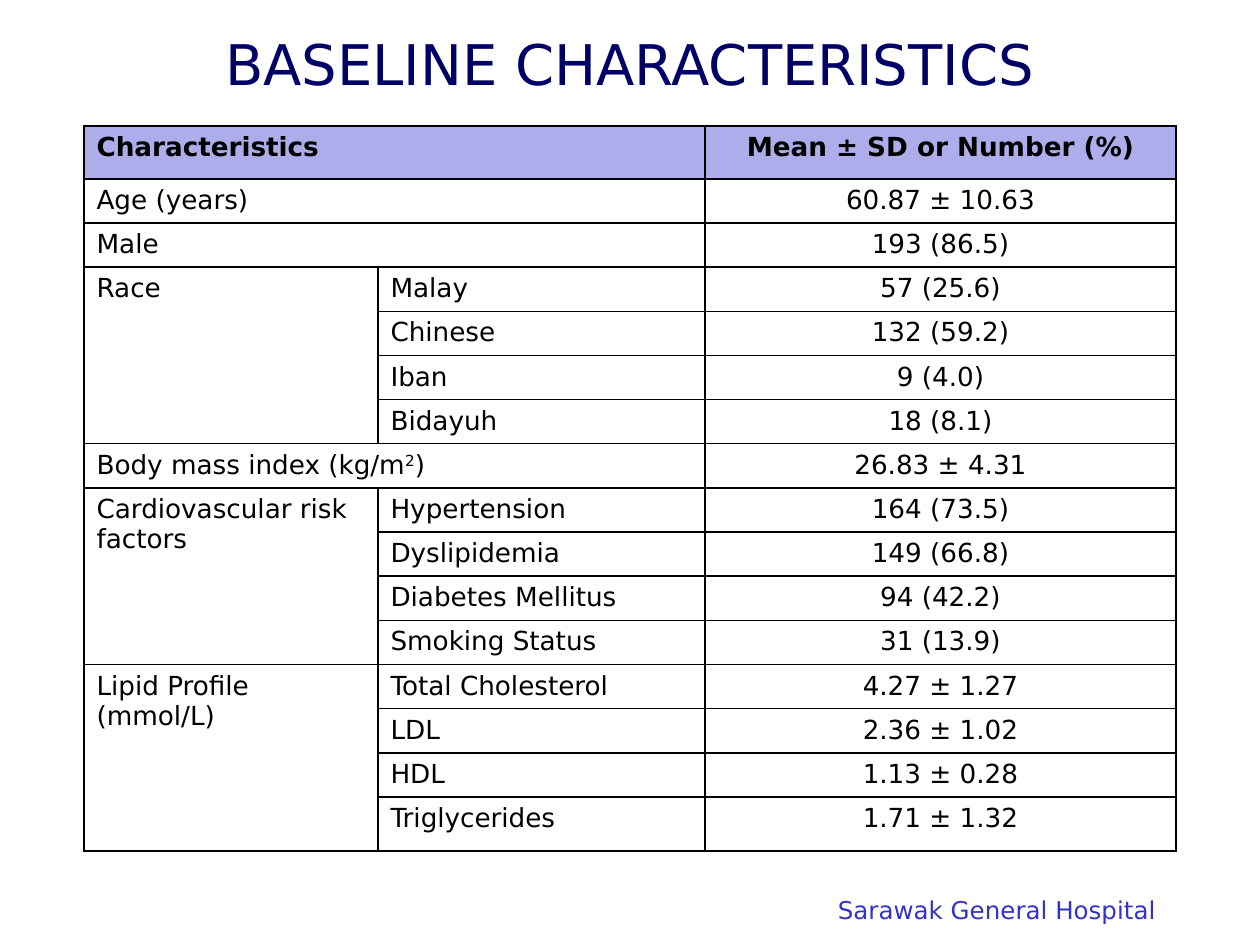
from dataclasses import dataclass

from lxml.etree import SubElement
from pptx import Presentation
from pptx.dml.color import RGBColor
from pptx.enum.text import MSO_ANCHOR, PP_ALIGN
from pptx.oxml.ns import qn
from pptx.table import Table, _Cell
from pptx.text.text import _Paragraph
from pptx.util import Pt


@dataclass(frozen=True)
class Theme:
    font: str = "DejaVu Sans"
    title: str = "000066"
    ink: str = "000000"
    footer: str = "3333CC"
    header_fill: str = "ADADEB"
    body_fill: str = "FFFFFF"
    title_size: float = 32
    table_size: float = 15
    footer_size: float = 14
    border_width: float = 1


@dataclass(frozen=True)
class Entry:
    label: str
    value: str


@dataclass(frozen=True)
class Group:
    label: str
    entries: tuple[Entry, ...]


THEME = Theme()
HEADER = Entry("Characteristics", "Mean ± SD or Number (%)")
BASELINE: tuple[Entry | Group, ...] = (
    Entry("Age (years)", "60.87 ± 10.63"),
    Entry("Male", "193 (86.5)"),
    Group("Race", (
        Entry("Malay", "57 (25.6)"),
        Entry("Chinese", "132 (59.2)"),
        Entry("Iban", "9 (4.0)"),
        Entry("Bidayuh", "18 (8.1)"),
    )),
    Entry("Body mass index (kg/m^2^)", "26.83 ± 4.31"),
    Group("Cardiovascular risk factors", (
        Entry("Hypertension", "164 (73.5)"),
        Entry("Dyslipidemia", "149 (66.8)"),
        Entry("Diabetes Mellitus", "94 (42.2)"),
        Entry("Smoking Status", "31 (13.9)"),
    )),
    Group("Lipid Profile (mmol/L)", (
        Entry("Total Cholesterol", "4.27 ± 1.27"),
        Entry("LDL", "2.36 ± 1.02"),
        Entry("HDL", "1.13 ± 0.28"),
        Entry("Triglycerides", "1.71 ± 1.32"),
    )),
)
COLUMN_WIDTHS = (168, 187, 269)
HEADER_HEIGHT, ROW_HEIGHT, LAST_HEIGHT = 30.2, 25.2, 31


def write(paragraph: _Paragraph, text: str, size: float, color: str,
          align: PP_ALIGN = PP_ALIGN.LEFT, bold: bool = False) -> None:
    paragraph.alignment = align
    paragraph.font.name = THEME.font
    paragraph.font.size = Pt(size)
    paragraph.font.bold = bold
    paragraph.font.color.rgb = RGBColor.from_string(color)
    for index, part in enumerate(text.split("^")):
        run = paragraph.add_run()
        run.text = part
        if index % 2:
            run._r.get_or_add_rPr().set("baseline", "30000")


def style_cell(cell: _Cell, fill: str) -> None:
    properties = cell._tc.get_or_add_tcPr()
    for side in ("lnL", "lnR", "lnT", "lnB"):
        border = SubElement(properties, qn(f"a:{side}"), w=str(Pt(THEME.border_width)))
        SubElement(SubElement(border, qn("a:solidFill")), qn("a:srgbClr"), val=THEME.ink)
    cell.fill.solid()
    cell.fill.fore_color.rgb = RGBColor.from_string(fill)


def write_cell(cell: _Cell, text: str, align: PP_ALIGN = PP_ALIGN.LEFT,
               bold: bool = False) -> None:
    write(cell.text_frame.paragraphs[0], text, THEME.table_size, THEME.ink, align, bold)


def write_entry(table: Table, row: int, entry: Entry, grouped: bool = False,
                bold: bool = False) -> None:
    if not grouped:
        table.cell(row, 0).merge(table.cell(row, 1))
    write_cell(table.cell(row, int(grouped)), entry.label, bold=bold)
    write_cell(table.cell(row, 2), entry.value, PP_ALIGN.CENTER, bold)


def fill_table(table: Table, row_heights: list[float]) -> None:
    table.first_row = table.horz_banding = False
    for column, width in zip(table.columns, COLUMN_WIDTHS):
        column.width = Pt(width)
    for index, height in enumerate(row_heights):
        table.rows[index].height = Pt(height)
        for cell in table.rows[index].cells:
            style_cell(cell, THEME.body_fill if index else THEME.header_fill)

    write_entry(table, 0, HEADER, bold=True)
    row = 1
    for item in BASELINE:
        if isinstance(item, Entry):
            write_entry(table, row, item)
            row += 1
            continue
        last = row + len(item.entries) - 1
        table.cell(row, 0).merge(table.cell(last, 0))
        write_cell(table.cell(row, 0), item.label)
        for entry in item.entries:
            write_entry(table, row, entry, grouped=True)
            row += 1


def main() -> None:
    presentation = Presentation()
    presentation.slide_width, presentation.slide_height = Pt(720), Pt(540)
    slide = presentation.slides.add_slide(presentation.slide_layouts[5])

    footer = slide.shapes.add_textbox(Pt(478.8), Pt(511.2), Pt(182), Pt(16.5)).text_frame
    footer.margin_left = footer.margin_right = footer.margin_top = footer.margin_bottom = 0
    footer.word_wrap = False
    write(footer.paragraphs[0], "Sarawak General Hospital", THEME.footer_size, THEME.footer)

    title = slide.shapes.title
    title.left, title.top, title.width, title.height = Pt(36), Pt(12.2), Pt(648), Pt(48)
    title.text_frame.vertical_anchor = MSO_ANCHOR.MIDDLE
    write(title.text_frame.paragraphs[0], "BASELINE CHARACTERISTICS",
          THEME.title_size, THEME.title, PP_ALIGN.CENTER)

    body_rows = sum(len(item.entries) if isinstance(item, Group) else 1 for item in BASELINE)
    row_heights = [HEADER_HEIGHT, *[ROW_HEIGHT] * (body_rows - 1), LAST_HEIGHT]
    baseline_table = slide.shapes.add_table(
        len(row_heights), len(COLUMN_WIDTHS), Pt(48), Pt(72),
        Pt(sum(COLUMN_WIDTHS)), Pt(sum(row_heights))).table
    fill_table(baseline_table, row_heights)
    presentation.save("out.pptx")


if __name__ == "__main__":
    main()
